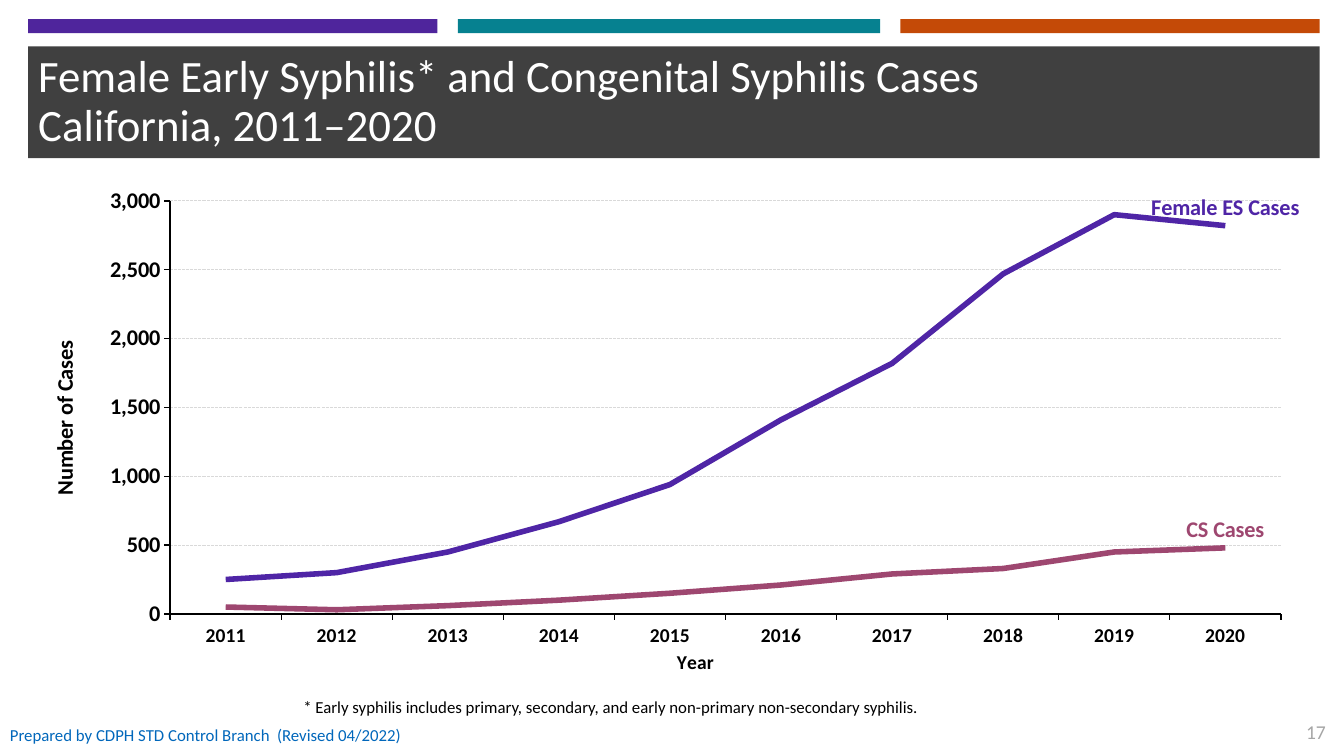
import dataclasses

import lxml.etree
import pptx
import pptx.chart.data
import pptx.dml.color
import pptx.enum.chart
import pptx.enum.dml
import pptx.enum.shapes
import pptx.enum.text
import pptx.oxml.ns
import pptx.util

Inches = pptx.util.Inches
Pt = pptx.util.Pt
Align = pptx.enum.text.PP_ALIGN
Anchor = pptx.enum.text.MSO_ANCHOR
qn = pptx.oxml.ns.qn


@dataclasses.dataclass(frozen=True)
class Theme:
    face: str = "Calibri"
    white: str = "FFFFFF"
    black: str = "000000"
    dark: str = "404040"
    violet: str = "4F259C"
    teal: str = "068190"
    orange: str = "C44A07"
    gray: str = "A6A6A6"
    blue: str = "0167BB"
    grid: str = "D9D9D9"
    female: str = "4F25A6"
    infant: str = "9E4770"
    head: int = 32
    large: int = 16
    mid: int = 14
    small: int = 12


def color(code):
    return pptx.dml.color.RGBColor.from_string(code)


def style(font, face, size, code, bold=False):
    font.name, font.size, font.bold = face, Pt(size), bold
    font.color.rgb = color(code)


def write(frame, text, face, size, code, bold=False, align=Align.LEFT, space=None):
    para = frame.paragraphs[0]
    para.text = text
    para.alignment = align
    para.line_spacing = space
    for run in para.runs:
        style(run.font, face, size, code, bold)


class Deck:
    """Draw styled elements on the current slide."""

    def __init__(self, theme):
        self.theme = theme
        self.show = pptx.Presentation()
        self.show.slide_width = Inches(13.33)
        self.show.slide_height = Inches(7.5)
        self.slide = self.show.slides.add_slide(self.show.slide_layouts[6])

    def bar(self, box, code):
        shape = self.slide.shapes.add_shape(
            pptx.enum.shapes.MSO_SHAPE.RECTANGLE, *map(Inches, box))
        shape.shadow.inherit = False
        shape.fill.solid()
        shape.fill.fore_color.rgb = color(code)
        shape.line.fill.background()

    def text(self, box, text, size, code, wrap=True, anchor=Anchor.MIDDLE, **form):
        frame = self.slide.shapes.add_textbox(*map(Inches, box)).text_frame
        frame.word_wrap = wrap
        frame.vertical_anchor = anchor
        write(frame, text, self.theme.face, size, code, **form)

    def axis(self, axis, title, size):
        theme = self.theme
        write(axis.axis_title.text_frame, title, theme.face, size, theme.black,
              bold=True, align=Align.CENTER)
        style(axis.tick_labels.font, theme.face, size, theme.black, True)
        axis.major_tick_mark = pptx.enum.chart.XL_TICK_MARK.OUTSIDE
        axis.format.line.color.rgb = color(theme.black)
        axis.format.line.width = Pt(1)

    def label(self, series, code):
        series.data_labels.show_value = False
        tag = series.points[len(series.values) - 1].data_label
        style(tag.font, self.theme.face, self.theme.large, code, True)
        tag.position = pptx.enum.chart.XL_LABEL_POSITION.ABOVE
        node = series.data_labels._element.find(qn("c:dLbl"))
        node.find(qn("c:showVal")).set("val", "0")
        node.find(qn("c:showSerName")).set("val", "1")

    def place(self, chart, **parts):
        area = chart._chartSpace.chart.plotArea
        for old in area.findall(qn("c:layout")):
            area.remove(old)
        layout = lxml.etree.Element(qn("c:layout"))
        area.insert(0, layout)
        manual = lxml.etree.SubElement(layout, qn("c:manualLayout"))
        rules = dict(layoutTarget="inner", xMode="edge", yMode="edge", **parts)
        for name, value in rules.items():
            lxml.etree.SubElement(manual, qn("c:" + name)).set("val", str(value))

    def chart(self, box, years, lines):
        theme = self.theme
        data = pptx.chart.data.CategoryChartData(number_format="#,##0")
        data.categories = years
        for name, code, values in lines:
            data.add_series(name, values)
        chart = self.slide.shapes.add_chart(
            pptx.enum.chart.XL_CHART_TYPE.LINE, *map(Inches, box), data).chart
        chart.has_legend = chart.has_title = False
        style(chart.font, theme.face, theme.large, theme.black, True)
        self.axis(chart.category_axis, "Year", theme.mid)
        scale = chart.value_axis
        self.axis(scale, "Number of Cases", theme.large)
        scale.minimum_scale, scale.maximum_scale, scale.major_unit = 0, 3000, 500
        scale.tick_labels.number_format = "#,##0"
        scale.tick_labels.number_format_is_linked = False
        rule = scale.major_gridlines.format.line
        rule.color.rgb = color(theme.grid)
        rule.width = Pt(0.75)
        rule.dash_style = pptx.enum.dml.MSO_LINE.SQUARE_DOT
        chart.plots[0].vary_by_categories = False
        for series, (name, code, values) in zip(chart.plots[0].series, lines):
            series.smooth = False
            series.marker.style = pptx.enum.chart.XL_MARKER_STYLE.NONE
            series.format.line.color.rgb = color(code)
            series.format.line.width = Pt(4)
            self.label(series, code)
        self.place(chart, x=0.1, y=0.06, w=0.89, h=0.81)


def main():
    theme = Theme()
    deck = Deck(theme)
    band = (0.28, 0.46, 12.81, 1.11)
    deck.bar(band, theme.dark)
    for left, width, code in ((0.28, 4.06, theme.violet),
                              (4.54, 4.19, theme.teal),
                              (8.93, 4.16, theme.orange)):
        deck.bar((left, 0.19, width, 0.14), code)
    deck.text(band, "Female Early Syphilis* and Congenital Syphilis Cases\v"
              "California, 2011–2020", theme.head, theme.white, space=0.9)
    deck.chart((0.45, 1.69, 12.45, 5.06), [str(year) for year in range(2011, 2021)], (
        ("Female ES Cases", theme.female,
         (250, 300, 450, 670, 940, 1410, 1820, 2470, 2900, 2820)),
        ("CS Cases", theme.infant,
         (50, 30, 60, 100, 150, 210, 290, 330, 450, 480))))
    deck.text((2.81, 6.86, 6.5, 0.3), "* Early syphilis includes primary, secondary, "
              "and early non-primary non-secondary syphilis.", theme.small,
              theme.black, wrap=False, anchor=Anchor.TOP, align=Align.CENTER)
    for left, width, text in ((0, 2.8, "Prepared by CDPH STD Control Branch"),
                              (2.65, 1.5, "(Revised 04/2022)")):
        deck.text((left, 7.09, width, 0.4), text, theme.small, theme.blue)
    deck.text((12.82, 7.09, 0.43, 0.34), "17", theme.mid, theme.gray,
              wrap=False, anchor=Anchor.TOP, align=Align.RIGHT)
    deck.show.save("out.pptx")


if __name__ == "__main__":
    main()
